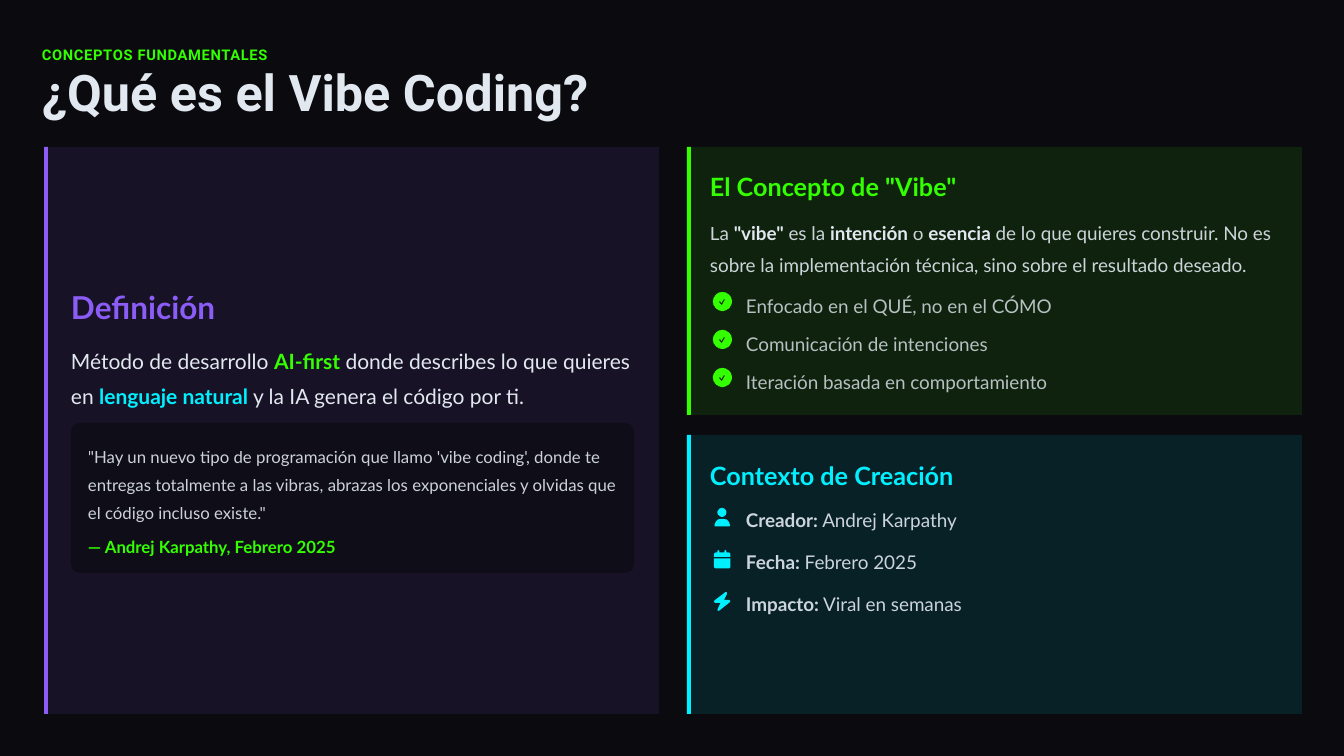
"""Build the slide that defines vibe coding, its concept and its origin."""
from math import cos, pi, sin

from lxml import etree
from pptx import Presentation
from pptx.dml.color import RGBColor
from pptx.enum.shapes import MSO_SHAPE, MSO_SHAPE_TYPE
from pptx.enum.text import MSO_ANCHOR, MSO_AUTO_SIZE, PP_ALIGN
from pptx.oxml.ns import qn
from pptx.util import Pt

PX = 914400 / 100.8
RECTANGLE, ROUNDED = MSO_SHAPE.RECTANGLE, MSO_SHAPE.ROUNDED_RECTANGLE
FILLED_TYPES = (MSO_SHAPE_TYPE.AUTO_SHAPE, MSO_SHAPE_TYPE.FREEFORM)
MIDDLE, LEFT, NO_FIT = MSO_ANCHOR.MIDDLE, PP_ALIGN.LEFT, MSO_AUTO_SIZE.NONE

THEME = {
    "background": ("0A0A0F", 100), "quote_box": ("0A0A0F", 60),
    "text": ("E2E8F0", 100), "soft": ("E2E8F0", 90), "muted": ("E2E8F0", 80),
    "violet": ("8B5CF6", 100), "violet_tint": ("8B5CF6", 10),
    "green": ("33FF00", 100), "green_tint": ("33FF00", 10),
    "cyan": ("00F0FF", 100), "cyan_tint": ("00F0FF", 10),
    "title_font": "Roboto", "body_font": "Lato",
    "eyebrow": 10.5, "title": 36, "main_heading": 22.5, "heading": 18,
    "lead": 15, "body": 13.5, "quote": 12,
}


def paint(fill, color):
    """Apply a theme colour with its opacity to a fill."""
    value, opacity = THEME[color]
    fill.solid()
    fill.fore_color.rgb = RGBColor.from_string(value)
    if opacity < 100:
        color_element = fill._xPr.xpath("./a:solidFill/a:srgbClr")[0]
        etree.SubElement(color_element, qn("a:alpha"), val=str(opacity * 1000))


def write_text(text, box, size, color="text", bold=False, spacing=1.0,
               font="body_font", tracking=0, shape=None):
    """Write a string, or a list of (text, colour, bold) runs, into a box."""
    left, top, width, height = (round(value * PX) for value in box)
    if shape is None:
        shape = slide.shapes.add_textbox(left, top, width, height)
    shape.left, shape.top, shape.width, shape.height = left, top, width, height
    frame = shape.text_frame
    frame.word_wrap, frame.auto_size, frame.vertical_anchor = True, NO_FIT, MIDDLE
    frame.margin_left = frame.margin_top = frame.margin_right = frame.margin_bottom = 0
    paragraph = frame.paragraphs[0]
    paragraph.alignment, paragraph.line_spacing = LEFT, spacing
    paragraph.space_before = Pt(0)
    runs = [(text, color, bold)] if isinstance(text, str) else text
    for run_text, run_color, run_bold in runs:
        run = paragraph.add_run()
        run.text = run_text
        run.font.name, run.font.size, run.font.bold = THEME[font], Pt(THEME[size]), run_bold
        paint(run.font.fill, run_color)
        if tracking:
            run.font._element.set("spc", str(tracking))


presentation = Presentation()
presentation.slide_width, presentation.slide_height = round(1344 * PX), round(756 * PX)
slide = presentation.slides.add_slide(presentation.slide_layouts[5])
paint(slide.background.fill, "background")

write_text("CONCEPTOS FUNDAMENTALES", (42, 42, 1267, 21), "eyebrow", "green", True, 1.2,
           font="title_font", tracking=50)
write_text("¿Qué es el Vibe Coding?", (42, 72, 1285, 50), "title", bold=True, spacing=0.8,
           font="title_font", shape=slide.shapes.title)

blocks = []
for accent, left, top, height in (
    ("violet", 44, 147, 567), ("green", 687, 147, 268), ("cyan", 687, 435, 279),
):
    blocks.append((RECTANGLE, accent + "_tint", left, top, 615, height))
    blocks.append((RECTANGLE, accent, left, top, 4, height))
blocks.append((ROUNDED, "quote_box", 71, 423, 563, 150))
for preset, color, *box in blocks:
    block = slide.shapes.add_shape(preset, *(round(value * PX) for value in box))
    paint(block.fill, color)
    if preset == ROUNDED:
        block.adjustments[0] = 0.06

write_text("Definición", (71, 288, 579, 38), "main_heading", "violet", True)
write_text([
    ("Método de desarrollo ", "text", False), ("AI-first", "green", True),
    (" donde describes lo que quieres en ", "text", False),
    ("lenguaje natural", "cyan", True),
    (" y la IA genera el código por ti.", "text", False),
], (71, 339, 574, 69), "lead", spacing=1.4)
write_text("\"Hay un nuevo tipo de programación que llamo 'vibe coding', donde te entregas "
           "totalmente a las vibras, abrazas los exponenciales y olvidas que el código "
           "incluso existe.\"", (88, 440, 538, 82), "quote", "soft", spacing=1.4)
write_text("— Andrej Karpathy, Febrero 2025", (88, 531, 538, 25), "quote", "green", True, 1.3)

write_text("El Concepto de \"Vibe\"", (710, 168, 584, 33), "heading", "green", True, 1.1)
write_text([
    ("La ", "soft", False), ("\"vibe\"", "text", True), (" es la ", "soft", False),
    ("intención", "text", True), (" o ", "soft", False), ("esencia", "text", True),
    (" de lo que quieres construir. No es sobre la implementación técnica, "
     "sino sobre el resultado deseado.", "soft", False),
], (710, 214, 581, 61), "body", spacing=1.4)
write_text("Contexto de Creación", (710, 457, 584, 33), "heading", "cyan", True, 1.1)

circle = [(cos(pi * step / 24), sin(pi * step / 24)) for step in range(48)]
check_icon = [
    [(19 + 19 * x, 19 + 19 * y) for x, y in circle],
    [(24, 15), (22, 14), (17, 22), (14, 18), (12, 20), (17, 26), (18, 26)],
]
person_icon = [
    [(16 + 9 * x, 9 + 9 * y) for x, y in circle],
    [(13, 22), (20, 22), (25, 23), (29, 27), (31, 31), (32, 35), (31, 37),
     (2, 37), (1, 35), (2, 31), (4, 27), (8, 23)],
]
calendar_icon = [
    [(0, 14), (0, 9), (1, 6), (4, 5), (7, 5), (7, 2), (9, 0), (11, 2), (11, 5),
     (21, 5), (21, 2), (23, 0), (25, 2), (25, 5), (29, 5), (32, 6), (33, 9), (33, 14)],
    [(0, 17), (33, 17), (33, 33), (32, 36), (29, 37), (4, 37), (1, 36), (0, 33)],
]
bolt_icon = [
    [(23, 0), (26, 1), (26, 4), (20, 16), (30, 16), (33, 18), (31, 21), (11, 37),
     (8, 38), (7, 35), (13, 22), (3, 22), (0, 20), (1, 17), (22, 1)],
]

items = []
for index, text in enumerate((
    "Enfocado en el QUÉ, no en el CÓMO",
    "Comunicación de intenciones",
    "Iteración basada en comportamiento",
)):
    top = 288 + 38 * index
    items.append((check_icon, "green", 713, top + 4, top, [(text, "muted", False)]))
for index, (icon, label, text) in enumerate((
    (person_icon, "Creador:", " Andrej Karpathy"),
    (calendar_icon, "Fecha:", " Febrero 2025"),
    (bolt_icon, "Impacto:", " Viral en semanas"),
)):
    top = 502 + 42 * index
    runs = [(label, "soft", True), (text, "soft", False)]
    items.append((icon, "cyan", 714, top + 6, top, runs))

for icon, color, icon_left, icon_top, text_top, runs in items:
    builder = slide.shapes.build_freeform(*icon[0][0], scale=PX / 2)
    builder.add_line_segments(icon[0][1:])
    for contour in icon[1:]:
        builder.move_to(*contour[0])
        builder.add_line_segments(contour[1:])
    icon_shape = builder.convert_to_shape(round(icon_left * PX), round(icon_top * PX))
    paint(icon_shape.fill, color)
    write_text(runs, (746, text_top, 540, 29), "body", spacing=1.3)

for shape in slide.shapes:
    if shape.shape_type in FILLED_TYPES:
        shape.line.fill.background()
        shape.shadow.inherit = False

presentation.save("out.pptx")
